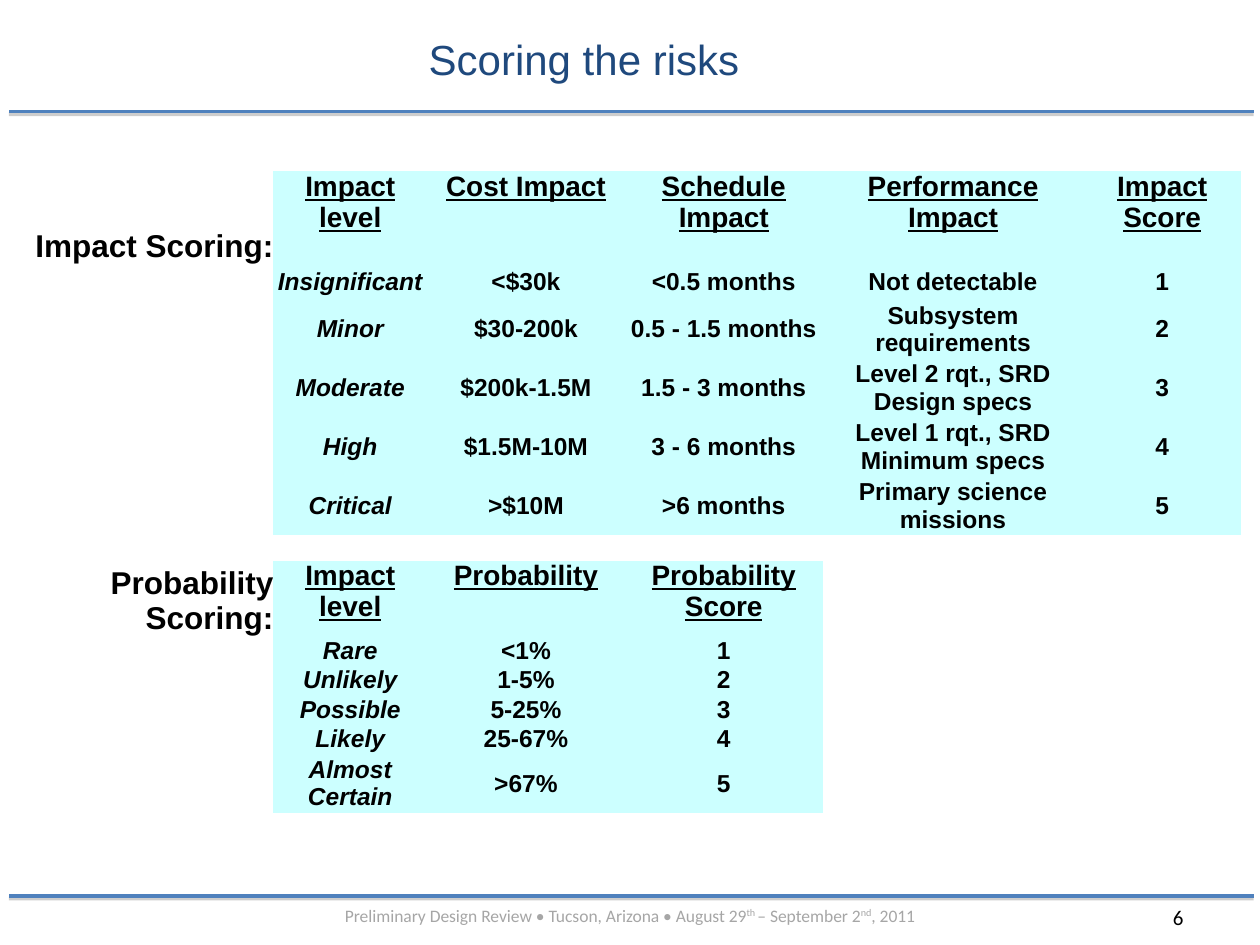
from dataclasses import dataclass

from lxml import etree
from pptx import Presentation
from pptx import util as u
from pptx.dml.color import RGBColor
from pptx.enum import shapes, text
from pptx.oxml import ns, parse_xml


@dataclass(frozen=True)
class Theme:
    heading_font: str = "Arial"
    footer_font: str = "Calibri"
    title: str = "1F497D"
    ink: str = "000000"
    muted: str = "A6A6A6"
    rule: str = "4F81BD"
    shadow: str = "808080"
    paper: str = "FFFFFF"
    panel: str = "CCFFFF"
    title_size: int = 24
    label_size: int = 18
    header_size: int = 16
    body_size: int = 14
    number_size: int = 12
    footer_size: int = 10


THEME = Theme()
NO_STYLE = "{2D5ABB26-0587-4C30-8999-92F81FD0307C}"

IMPACT_LABEL = "Impact Scoring:"
IMPACT_ROWS = [
    ["Impact level", "Cost Impact", "Schedule Impact", "Performance Impact", "Impact Score"],
    ["Insignificant", "<$30k", "<0.5 months", "Not detectable", "1"],
    ["Minor", "$30-200k", "0.5 - 1.5 months", "Subsystem requirements", "2"],
    ["Moderate", "$200k-1.5M", "1.5 - 3 months", "Level 2 rqt., SRD Design specs", "3"],
    ["High", "$1.5M-10M", "3 - 6 months", "Level 1 rqt., SRD Minimum specs", "4"],
    ["Critical", ">$10M", ">6 months", "Primary science missions", "5"],
]
PROBABILITY_LABEL = "Probability Scoring:"
PROBABILITY_ROWS = [
    ["Impact level", "Probability", "Probability Score"],
    ["Rare", "<1%", "1"],
    ["Unlikely", "1-5%", "2"],
    ["Possible", "5-25%", "3"],
    ["Likely", "25-67%", "4"],
    ["Almost Certain", ">67%", "5"],
]
COLUMN_WIDTHS = [2, 1.22, 1.57, 1.57, 2.07, 1.25]
ROW_HEIGHTS = [0.74, 0.28] + [0.44] * 4 + [0.2, 0.56] + [0.22] * 4 + [0.44]

FOOTER = [
    ("Preliminary Design Review • Tucson, Arizona • August 29", False),
    ("th ", True),
    ("– September 2", False),
    ("nd", True),
    (", 2011", False),
]


def format_font(font, color, **values):
    for name, value in values.items():
        setattr(font, name, value)
    font.color.rgb = RGBColor.from_string(color)


def add_rule(slide, y):
    """Horizontal rule with a soft grey shadow below it."""
    rule = slide.shapes.add_connector(
        shapes.MSO_CONNECTOR.STRAIGHT,
        u.Inches(9.95), u.Inches(y), u.Inches(0.07), u.Inches(y))
    rule.line.color.rgb = RGBColor.from_string(THEME.rule)
    rule.line.width = u.Pt(2)
    rule._element.spPr.append(parse_xml(
        f'<a:effectLst {ns.nsdecls("a")}>'
        '<a:outerShdw blurRad="0" dist="20320" dir="5400000" rotWithShape="0">'
        f'<a:srgbClr val="{THEME.shadow}"><a:alpha val="38000"/></a:srgbClr>'
        '</a:outerShdw></a:effectLst>'))


def add_text(slide, box, runs, color, align=text.PP_ALIGN.CENTER,
             anchor=text.MSO_ANCHOR.TOP, **font_values):
    """Text box of one paragraph; runs are (wording, superscript) pairs."""
    frame = slide.shapes.add_textbox(*map(u.Inches, box)).text_frame
    frame.word_wrap = True
    frame.vertical_anchor = anchor
    paragraph = frame.paragraphs[0]
    paragraph.alignment = align
    for wording, superscript in runs:
        run = paragraph.add_run()
        run.text = wording
        format_font(run.font, color, **font_values)
        if superscript:
            run._r.get_or_add_rPr().set("baseline", "30000")


def fill_cell(cell, wording, align, anchor, **font_values):
    cell.vertical_anchor = anchor
    paragraph = cell.text_frame.paragraphs[0]
    paragraph.alignment = align
    run = paragraph.add_run()
    run.text = wording
    format_font(run.font, THEME.ink, name=THEME.heading_font, bold=True, **font_values)


def fill_block(table, top, label, rows):
    """A scoring block: label on the left, header row, then one row a level."""
    fill_cell(table.cell(top, 0), label, text.PP_ALIGN.RIGHT, text.MSO_ANCHOR.BOTTOM,
              size=u.Pt(THEME.label_size))
    for r, row in enumerate(rows):
        for c, wording in enumerate(row):
            cell = table.cell(top + r, c + 1)
            cell.fill.fore_color.rgb = RGBColor.from_string(THEME.panel)
            if r == 0:
                anchor = text.MSO_ANCHOR.TOP
                values = {"size": u.Pt(THEME.header_size), "underline": True}
            else:
                anchor = text.MSO_ANCHOR.MIDDLE
                values = {"size": u.Pt(THEME.body_size), "italic": c == 0}
            fill_cell(cell, wording, text.PP_ALIGN.CENTER, anchor, **values)


def add_scoring_table(slide):
    table = slide.shapes.add_table(
        len(ROW_HEIGHTS), len(COLUMN_WIDTHS), u.Inches(0.17), u.Inches(1.36),
        u.Inches(sum(COLUMN_WIDTHS)), u.Inches(sum(ROW_HEIGHTS))).table
    table.first_row = table.horz_banding = False
    table._tbl.tblPr.find(ns.qn("a:tableStyleId")).text = NO_STYLE
    for column, width in zip(table.columns, COLUMN_WIDTHS):
        column.width = u.Inches(width)
    for row, height in zip(table.rows, ROW_HEIGHTS):
        row.height = u.Inches(height)

    # Plain cells without insets
    for cell in table.iter_cells():
        for side in ("left", "right", "top", "bottom"):
            setattr(cell, f"margin_{side}", 0)
        cell.fill.solid()
        cell.fill.fore_color.rgb = RGBColor.from_string(THEME.paper)

    # The two blocks, one spacer row apart
    fill_block(table, 0, IMPACT_LABEL, IMPACT_ROWS)
    fill_block(table, len(IMPACT_ROWS) + 1, PROBABILITY_LABEL, PROBABILITY_ROWS)

    # Small type in empty cells keeps the rows from growing
    for cell in table.iter_cells():
        if not cell.text:
            end = etree.SubElement(cell.text_frame.paragraphs[0]._p, ns.qn("a:endParaRPr"))
            end.set("sz", str(THEME.footer_size * 100))


def main():
    prs = Presentation()
    prs.slide_width, prs.slide_height = u.Inches(10), u.Inches(7.5)
    slide = prs.slides.add_slide(prs.slide_layouts[6])

    # Rules above and below the content
    for y in (0.885, 7.11):
        add_rule(slide, y)

    # Page number and footer
    add_text(slide, (9.21, 7.13, 0.62, 0.3), [("6", False)], THEME.ink,
             align=text.PP_ALIGN.LEFT, name=THEME.footer_font, size=u.Pt(THEME.number_size))
    add_text(slide, (0.5, 7.13, 9, 0.27), FOOTER, THEME.muted,
             name=THEME.footer_font, size=u.Pt(THEME.footer_size))

    # Title
    add_text(slide, (1.25, 0.16, 6.77, 0.61), [("Scoring the risks", False)], THEME.title,
             anchor=text.MSO_ANCHOR.MIDDLE, name=THEME.heading_font,
             size=u.Pt(THEME.title_size))

    add_scoring_table(slide)
    prs.save("out.pptx")


if __name__ == "__main__":
    main()
